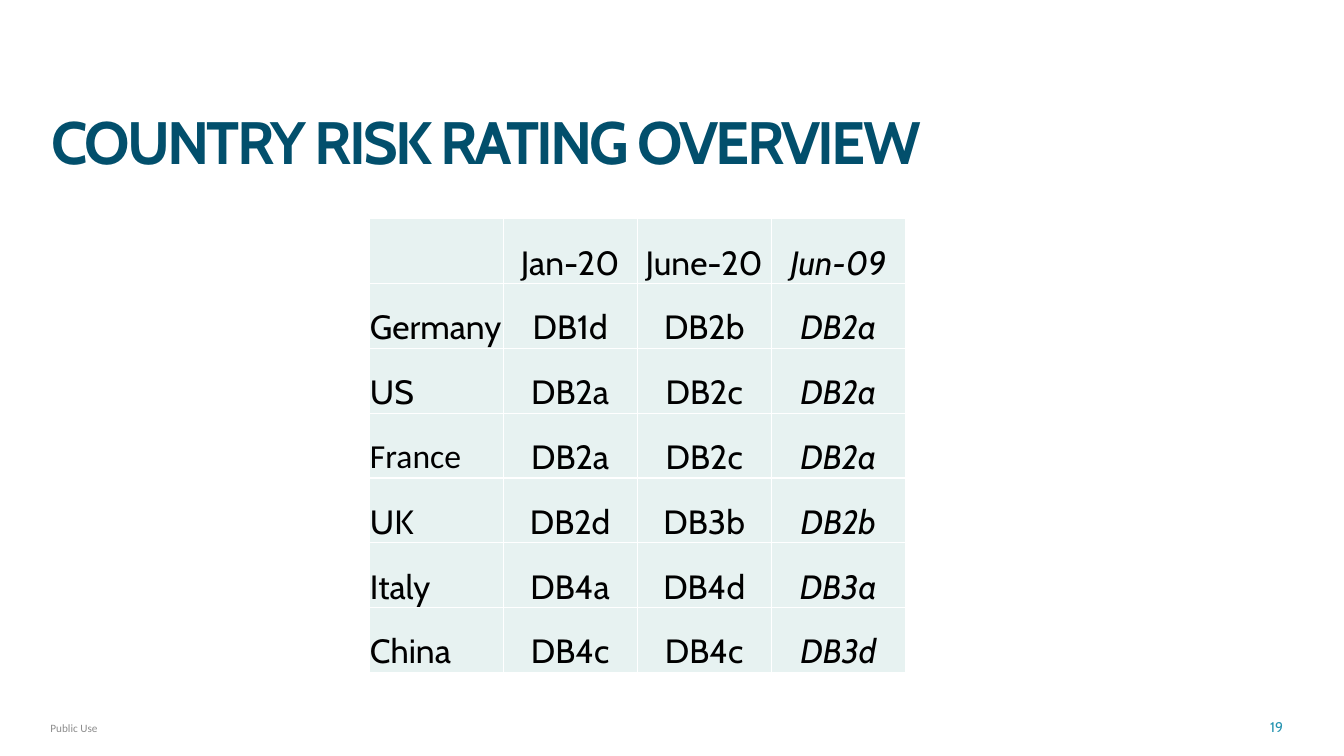
import pptx
import pptx.dml.color
import pptx.enum.text
import pptx.oxml
import pptx.oxml.ns
import pptx.util
from pptx.dml.color import RGBColor

Inches, Pt = pptx.util.Inches, pptx.util.Pt
ANCHOR, ALIGN = pptx.enum.text.MSO_ANCHOR, pptx.enum.text.PP_ALIGN

NAVY = RGBColor(0x02, 0x4F, 0x6C)
TEAL = RGBColor(0x23, 0x93, 0xB0)
GREY = RGBColor(0x8C, 0x8C, 0x8C)
MINT = RGBColor(0xE7, 0xF2, 0xF1)
BLACK = RGBColor(0, 0, 0)
WHITE = RGBColor(0xFF, 0xFF, 0xFF)

RATINGS = [
    ("", "Jan-20", "June-20", "Jun-09"),
    ("Germany", "DB1d", "DB2b", "DB2a"),
    ("US", "DB2a", "DB2c", "DB2a"),
    ("France", "DB2a", "DB2c", "DB2a"),
    ("UK", "DB2d", "DB3b", "DB2b"),
    ("Italy", "DB4a", "DB4d", "DB3a"),
    ("China", "DB4c", "DB4c", "DB3d"),
]
COLUMN_WIDTH, ROW_HEIGHT = Inches(1.33), Inches(0.643)


def write(frame, text, size, color, face="Cabin"):
    """Fill the frame with one formatted paragraph and return that paragraph."""
    frame.text = text
    paragraph = frame.paragraphs[0]
    for run in paragraph.runs:
        run.font.size, run.font.name = Pt(size), face
        run.font.color.rgb = color
    return paragraph


def add_white_borders(cell):
    properties = cell._tc.get_or_add_tcPr()
    for position, side in enumerate(("lnL", "lnR", "lnT", "lnB")):
        properties.insert(position, pptx.oxml.parse_xml(
            f'<a:{side} {pptx.oxml.ns.nsdecls("a")} w="{Pt(1)}"><a:solidFill>'
            f'<a:srgbClr val="{WHITE}"/></a:solidFill></a:{side}>'))


deck = pptx.Presentation()
deck.slide_width, deck.slide_height = Inches(13.33), Inches(7.5)
slide = deck.slides.add_slide(deck.slide_layouts[5])

# Title
title = slide.shapes.title
title.left, title.top = Inches(0.51), Inches(0.69)
title.width, title.height = Inches(12.31), Inches(1.04)
heading = title.text_frame
heading.margin_left = heading.margin_right = heading.margin_top = heading.margin_bottom = 0
heading.vertical_anchor = ANCHOR.BOTTOM
heading.word_wrap = True
heading.auto_size = pptx.enum.text.MSO_AUTO_SIZE.NONE
headline = write(heading, "COUNTRY RISK RATING OVERVIEW", 42.7, NAVY)
headline.alignment = ALIGN.LEFT
headline.line_spacing = 0.7
headline.runs[0].font.bold = True
headline.runs[0].font._element.set("spc", "-200")

# Ratings table
ratings = slide.shapes.add_table(
    len(RATINGS), len(RATINGS[0]), Inches(3.66), Inches(2.17),
    COLUMN_WIDTH * len(RATINGS[0]), ROW_HEIGHT * len(RATINGS)).table
ratings.first_row = ratings.horz_banding = False
for column in ratings.columns:
    column.width = COLUMN_WIDTH
for row, entries in enumerate(RATINGS):
    ratings.rows[row].height = ROW_HEIGHT
    for column, entry in enumerate(entries):
        cell = ratings.cell(row, column)
        cell.margin_left = cell.margin_right = cell.margin_top = Inches(0.01)
        cell.margin_bottom = 0
        cell.vertical_anchor = ANCHOR.BOTTOM
        cell.fill.solid()
        cell.fill.fore_color.rgb = MINT
        add_white_borders(cell)
        face = "Calibri" if entry == "France" else "Cabin"
        rating = write(cell.text_frame, entry, 24, BLACK, face)
        rating.alignment = ALIGN.CENTER if column else ALIGN.LEFT
        for run in rating.runs:
            run.font.italic = column == len(entries) - 1

# Footer
classification = slide.shapes.add_textbox(
    Inches(0.5), Inches(7.11), Inches(4.48), Inches(0.29)).text_frame
classification.margin_left = classification.margin_right = 0
classification.word_wrap = True
write(classification, "Public Use", 8, GREY, "Calibri")

page_number = slide.shapes.add_textbox(
    Inches(12.5), Inches(7.05), Inches(0.42), Inches(0.33)).text_frame
page_number.vertical_anchor = ANCHOR.MIDDLE
page_number.word_wrap = True
write(page_number, "19", 10, TEAL)

deck.save("out.pptx")
